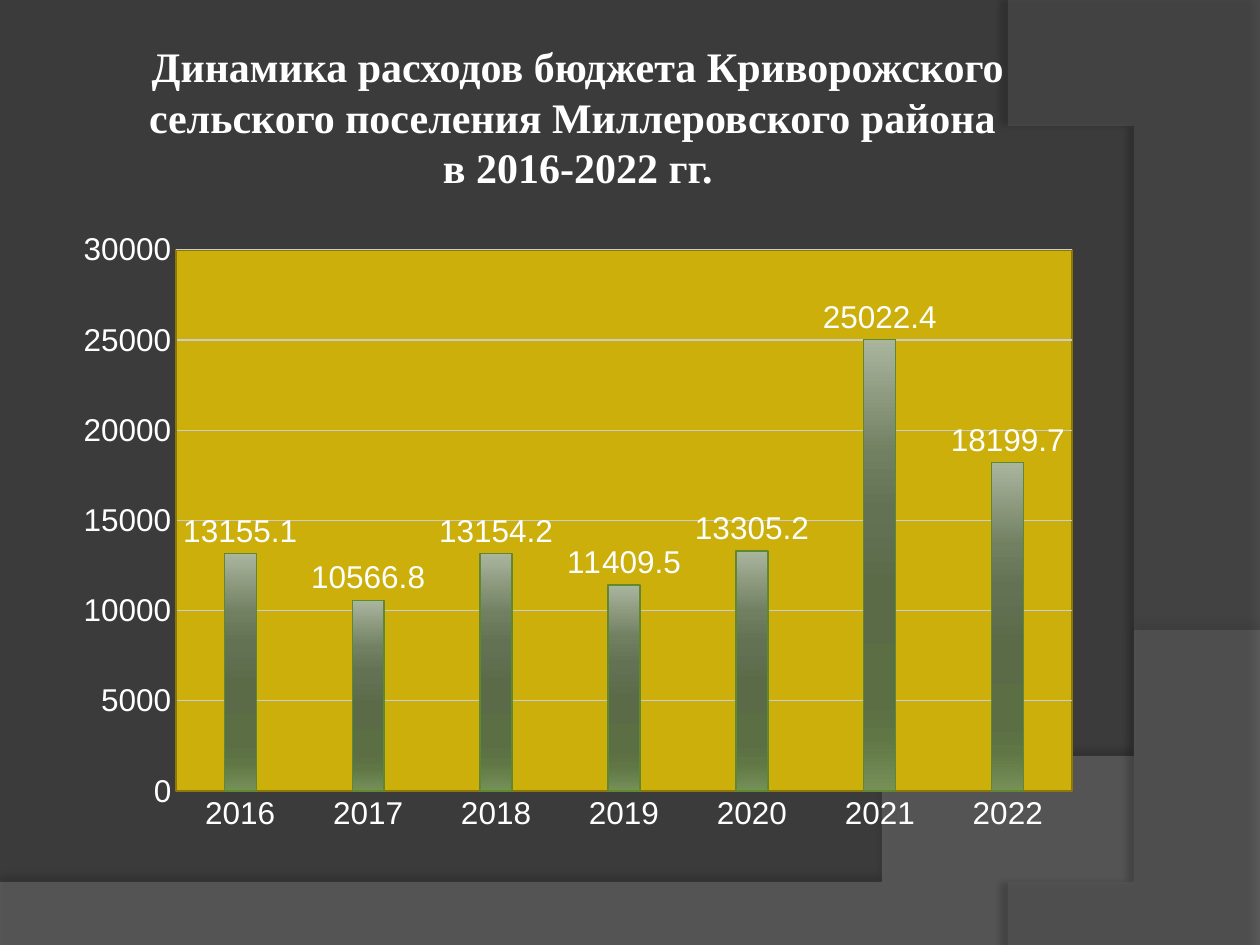
"""Build a slide with a column chart of yearly settlement budget spending."""
from lxml import etree
from pptx import Presentation
from pptx import util as u
from pptx.chart.data import CategoryChartData
from pptx.dml.color import RGBColor
from pptx.enum import chart as charts, text
from pptx.oxml import parse_xml
from pptx.oxml.ns import nsdecls, qn

TITLE = ("Динамика расходов бюджета Криворожского сельского поселения "
         "Миллеровского района \vв 2016-2022 гг.")
SPENDING = {"2016": 13155.1, "2017": 10566.8, "2018": 13154.2, "2019": 11409.5,
            "2020": 13305.2, "2021": 25022.4, "2022": 18199.7}

BACKGROUND = RGBColor(0x3B, 0x3B, 0x3B)
WHITE = RGBColor(0xFF, 0xFF, 0xFF)
GOLD = RGBColor(0xCC, 0xAF, 0x0A)
DARK_GOLD = RGBColor(0x8A, 0x78, 0x0A)
GRID = RGBColor(0xCC, 0xCC, 0xCC)
GREEN = RGBColor(0x5F, 0x88, 0x2F)
LOWER_GREY = RGBColor(0x7F, 0x7F, 0x7F)
RIGHT_GREY = RGBColor(0x5E, 0x5E, 0x5E)
COLUMN_STOPS = [(0, "A9B59D"), (25, "728062"), (38, "647254"), (55, "5B6B48"),
                (80, "5B6E44"), (88, "607645"), (100, "769058")]

WIDTH, HEIGHT = 10, 7.5
LEFT, CONTENT_WIDTH = 0.5, 8.17
PLOT_LAYOUT = {"x": 0.11, "y": 0.047, "w": 0.87, "h": 0.868}
SWOOSHES = [
    {"before": [(0, 7.05), (0, 7.51), (10, 7.51)],
     "curve": [(10, 5.2), (5.59, 7.29), (3.91, 7.19), (0, 7.05)],
     "color": LOWER_GREY, "opacity": 45,
     "shadow": {"opacity": 35, "blur": 4, "distance": 3.5, "angle": 270}},
    {"before": [(10, 0.02), (10, 7.5)],
     "curve": [(8.21, 7.5), (9.35, 6.19), (10.18, 3), (8, 0)],
     "color": RIGHT_GREY, "opacity": 40,
     "shadow": {"opacity": 45, "blur": 4, "distance": 4, "angle": 180}},
]


def bezier(points, steps=60):
    """Return evenly stepped points on a cubic curve."""
    weights = [((1 - t) ** 3, 3 * t * (1 - t) ** 2, 3 * t * t * (1 - t), t ** 3)
               for t in (step / steps for step in range(steps + 1))]
    return [tuple(sum(w * p[axis] for w, p in zip(weight, points)) for axis in (0, 1))
            for weight in weights]


def add_swoosh(slide, before, curve, color, opacity, shadow):
    """Draw a translucent curved area with a soft shadow."""
    start, *rest = before + bezier(curve)
    builder = slide.shapes.build_freeform(*start, scale=u.Inches(1))
    builder.add_line_segments(rest, close=True)
    shape = builder.convert_to_shape()
    shape.fill.solid()
    shape.fill.fore_color.rgb = color
    shape.line.fill.background()
    shape.shadow.inherit = False
    fill_color = shape.element.spPr.find(qn("a:solidFill"))[0]
    etree.SubElement(fill_color, qn("a:alpha"), val=str(opacity * 1000))
    shape.element.spPr.find(qn("a:effectLst")).append(parse_xml(
        f'<a:outerShdw {nsdecls("a")} blurRad="{u.Pt(shadow["blur"])}" '
        f'dist="{u.Pt(shadow["distance"])}" dir="{shadow["angle"] * 60000}" '
        f'algn="ctr" rotWithShape="0"><a:srgbClr val="000000">'
        f'<a:alpha val="{shadow["opacity"] * 1000}"/></a:srgbClr></a:outerShdw>'))


def set_font(font, size, name, color=WHITE, bold=False):
    """Apply one text format to a font."""
    font.size, font.name, font.bold = u.Pt(size), name, bold
    font.color.rgb = color


def write_text(shape, content, align=text.PP_ALIGN.CENTER, **font_format):
    """Fill a shape with centred, formatted text."""
    frame = shape.text_frame
    frame.word_wrap = True
    frame.auto_size = text.MSO_AUTO_SIZE.NONE
    frame.vertical_anchor = text.MSO_ANCHOR.MIDDLE
    frame.margin_left = frame.margin_right = u.Inches(0.05)
    frame.margin_top = frame.margin_bottom = u.Inches(0.05)
    paragraph = frame.paragraphs[0]
    paragraph.text = content
    paragraph.alignment = align
    paragraph.line_spacing = 1
    set_font(paragraph.font, **font_format)
    for run in paragraph.runs:
        set_font(run.font, **font_format)


def style_plot_area(chart):
    """Place the plot area and fill it."""
    plot_area = chart.element.chart.plotArea
    for layout in plot_area.findall(qn("c:layout")):
        plot_area.remove(layout)
    sizes = "".join(f'<c:{key} val="{value}"/>' for key, value in PLOT_LAYOUT.items())
    plot_area.insert(0, parse_xml(
        f'<c:layout {nsdecls("c")}><c:manualLayout><c:layoutTarget val="inner"/>'
        f'<c:xMode val="edge"/><c:yMode val="edge"/>{sizes}</c:manualLayout></c:layout>'))
    plot_area.append(parse_xml(
        f'<c:spPr {nsdecls("c", "a")}><a:solidFill><a:srgbClr val="{GOLD}"/></a:solidFill>'
        f'<a:ln w="{u.Pt(1)}"><a:solidFill><a:srgbClr val="{DARK_GOLD}"/></a:solidFill>'
        f'</a:ln></c:spPr>'))


def style_columns(series):
    """Give the columns a vertical gradient and a thin outline."""
    series.format.fill.gradient()
    series.format.fill.gradient_angle = 270
    stops = next(series.format.element.iter(qn("a:gsLst"))) if hasattr(
        series.format, "element") else next(series._element.iter(qn("a:gsLst")))
    for stop in list(stops):
        stops.remove(stop)
    for position, color in COLUMN_STOPS:
        stop = etree.SubElement(stops, qn("a:gs"), pos=str(position * 1000))
        etree.SubElement(stop, qn("a:srgbClr"), val=color)
    series.format.line.color.rgb = GREEN
    series.format.line.width = u.Pt(0.75)


def add_spending_chart(slide):
    """Add the column chart with value labels."""
    data = CategoryChartData(number_format="General")
    data.categories = list(SPENDING)
    data.add_series("Series 1", list(SPENDING.values()))
    chart = slide.shapes.add_chart(
        charts.XL_CHART_TYPE.COLUMN_CLUSTERED, u.Inches(LEFT), u.Inches(1.75),
        u.Inches(CONTENT_WIDTH), u.Inches(4.95), data).chart
    chart.has_title = chart.has_legend = False
    set_font(chart.font, size=18, name="Arial")
    for axis in (chart.category_axis, chart.value_axis):
        axis.major_tick_mark = axis.minor_tick_mark = charts.XL_TICK_MARK.NONE
        axis.format.line.color.rgb = DARK_GOLD
    axis = chart.value_axis
    axis.minimum_scale, axis.maximum_scale, axis.major_unit = 0, 30000, 5000
    axis.has_major_gridlines = True
    axis.major_gridlines.format.line.color.rgb = GRID
    plot = chart.plots[0]
    plot.gap_width = 300
    plot.vary_by_categories = False
    plot.has_data_labels = True
    labels = plot.data_labels
    labels.show_value = True
    labels.position = charts.XL_LABEL_POSITION.OUTSIDE_END
    set_font(labels.font, size=18, name="Arial")
    style_columns(plot.series[0])
    style_plot_area(chart)


def main():
    """Assemble and save the slide."""
    presentation = Presentation()
    presentation.slide_width, presentation.slide_height = u.Inches(WIDTH), u.Inches(HEIGHT)
    slide = presentation.slides.add_slide(presentation.slide_layouts[5])
    slide.background.fill.solid()
    slide.background.fill.fore_color.rgb = BACKGROUND
    for swoosh in SWOOSHES:
        add_swoosh(slide, **swoosh)
    title = slide.shapes.title
    title.left, title.top = u.Inches(LEFT), u.Inches(0.3)
    title.width, title.height = u.Inches(CONTENT_WIDTH), u.Inches(1.25)
    write_text(title, TITLE, size=24, name="Times New Roman", bold=True)
    title.element.getparent().append(title.element)
    add_spending_chart(slide)
    presentation.save("out.pptx")


if __name__ == "__main__":
    main()
